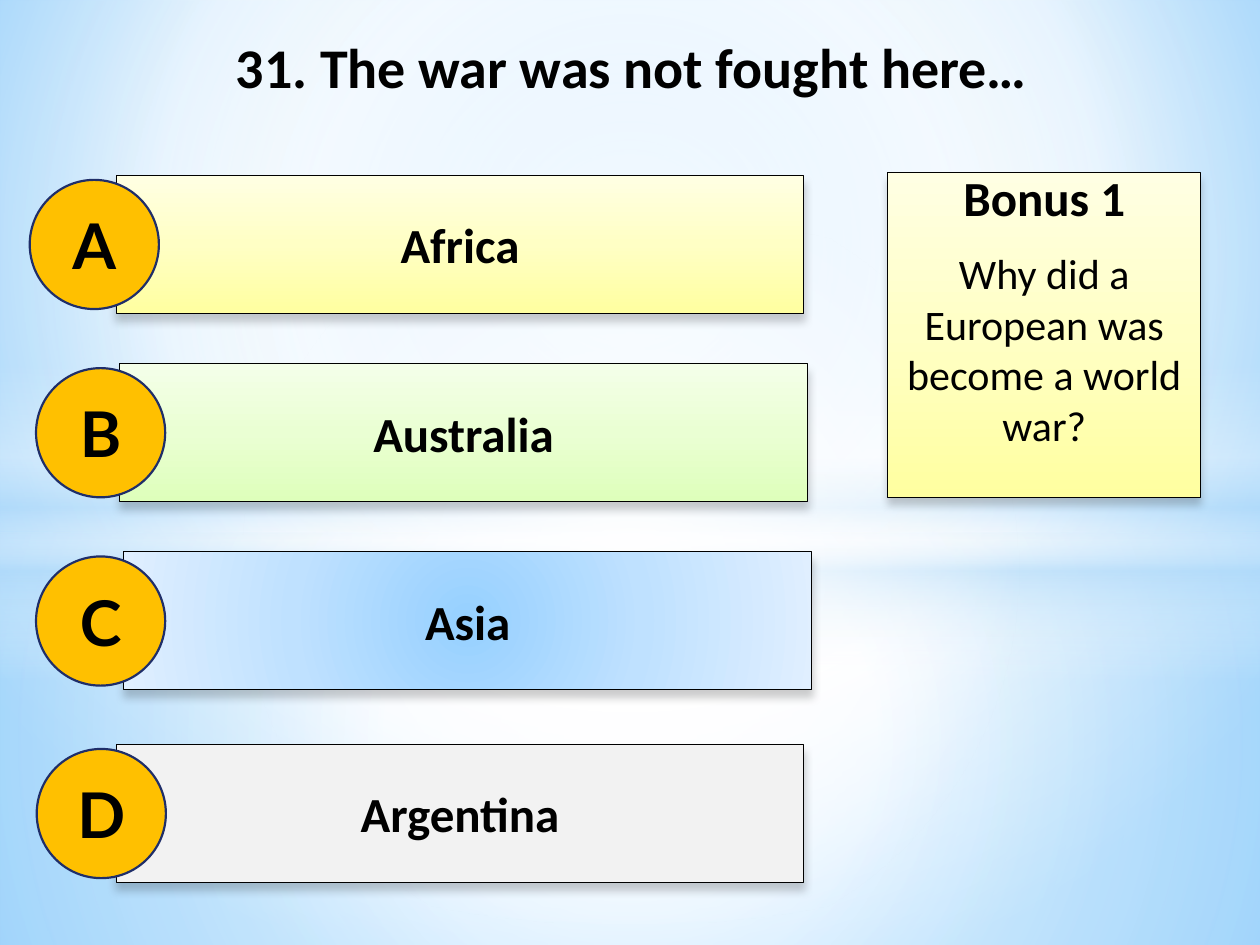
from lxml.etree import SubElement
from pptx import Presentation
from pptx.dml.color import RGBColor
from pptx.enum.shapes import MSO_SHAPE
from pptx.enum.text import MSO_ANCHOR, PP_ALIGN
from pptx.oxml import parse_xml
from pptx.oxml.ns import qn
from pptx.util import Pt

HEX = {
    "black": "000000", "white": "FFFFFF", "mist": "B4DCFA",
    "sky": "9ED5FF", "deep": "5BB9FF", "gold": "FFC000", "navy": "1F2E69",
    "grey": "F2F2F2",
    "lemon": "FFFFA0", "lemon2": "FFFFC5", "lemon3": "FFFFE3",
    "lime": "DEFFBB", "lime2": "EAFFD3", "lime3": "F4FFE9",
    "blue": "96D0FF", "blue2": "BFE1FF", "blue3": "E0EFFF",
}
NS = 'xmlns:a="http://schemas.openxmlformats.org/drawingml/2006/main"'
MID = (50, 50, 50, 50)


def grad(stops, angle=None, to=MID):
    """Gradient fill: stops are (place, colour, opacity) in percent."""
    marks = "".join(
        f'<a:gs pos="{at * 1000}"><a:srgbClr val="{HEX[name]}">'
        f'<a:alpha val="{see * 1000}"/></a:srgbClr></a:gs>'
        for at, name, see in stops)
    if angle is None:
        sides = " ".join(f'{s}="{v * 1000}"' for s, v in zip("ltrb", to))
        way = f'<a:path path="circle"><a:fillToRect {sides}/></a:path>'
    else:
        way = f'<a:lin ang="{angle * 60000}" scaled="0"/>'
    return parse_xml(f'<a:gradFill {NS} rotWithShape="1">'
                     f'<a:gsLst>{marks}</a:gsLst>{way}</a:gradFill>')


def write(frame, text, size=28, font="Calibri", bold=True, before=0, more=False):
    """Put one centred paragraph into a text frame."""
    frame.word_wrap = True
    para = frame.add_paragraph() if more else frame.paragraphs[0]
    para.alignment = PP_ALIGN.CENTER
    para.space_before = Pt(before)
    run = para.add_run()
    run.text = text
    run.font.size, run.font.name, run.font.bold = Pt(size), font, bold
    run.font.color.rgb = RGBColor.from_string(HEX["black"])


deck = Presentation()
deck.slide_width, deck.slide_height = Pt(720), Pt(540)
slide = deck.slides.add_slide(deck.slide_layouts[6])
shapes = slide.shapes

# Background
slide.background.fill.solid()
back = slide.background.fill._xPr
back.replace(back.find(qn("a:solidFill")), grad(
    [(0, "sky", 100), (60, "white", 100), (100, "deep", 100)],
    to=(20, 10, 20, 60)))

# Soft light behind the content
RECT, OVAL = MSO_SHAPE.RECTANGLE, MSO_SHAPE.OVAL
glows = [
    (RECT, 304.5, 235.5, None,
     [(0, "white", 91), (37, "white", 76), (100, "mist", 79)]),
    (RECT, 0, 304.5, None,
     [(0, "white", 89), (48, "white", 62), (100, "mist", 79)]),
    (RECT, 209, 180, 90,
     [(0, "white", 0), (29, "white", 30), (45, "mist", 40),
      (55, "white", 26), (65, "mist", 60), (100, "white", 0)]),
    (OVAL, 126, 402, None, [(0, "white", 100), (54, "white", 0)]),
]
for kind, top, high, angle, stops in glows:
    glow = shapes.add_shape(kind, 0, Pt(top), Pt(720), Pt(high))
    glow.shadow.inherit = False
    glow.line.fill.background()
    glow.fill.background()
    props = glow._element.spPr
    props.replace(props.find(qn("a:noFill")), grad(stops, angle))

# Title
title = shapes.add_textbox(Pt(15), Pt(15), Pt(692), Pt(76))
write(title.text_frame, "31. The war was not fought here…", size=32)

# Answer bars and bonus note
bars = [
    ("Africa", 66.4, 100, 393, 79, "lemon", 270),
    ("Australia", 68.4, 207.6, 393, 79, "lime", 270),
    ("Asia", 70.8, 315.2, 393, 79, "blue", None),
    ("Argentina", 66.4, 425.2, 393, 79, "grey", None),
    ("Bonus 1", 507.2, 98.6, 179, 185.6, "lemon", 270),
]
for text, left, top, wide, high, tint, angle in bars:
    bar = shapes.add_shape(RECT, Pt(left), Pt(top), Pt(wide), Pt(high))
    bar.line.color.rgb = RGBColor.from_string(HEX["black"])
    bar.line.width = Pt(0.5)
    bar.fill.solid()
    bar.fill.fore_color.rgb = RGBColor.from_string(HEX[tint])
    props = bar._element.spPr
    if tint != "grey":
        props.replace(props.find(qn("a:solidFill")), grad(
            [(0, tint, 100), (50, tint + "2", 100), (100, tint + "3", 100)],
            angle))
    bar.shadow.inherit = False
    shade = SubElement(props.find(qn("a:effectLst")), qn("a:outerShdw"),
                       blurRad=str(Pt(5)), dist=str(Pt(4)), dir="5400000",
                       algn="ctr", rotWithShape="0")
    ink = SubElement(shade, qn("a:srgbClr"), val=HEX["black"])
    SubElement(ink, qn("a:alpha"), val="20000")
    frame = bar.text_frame
    frame.vertical_anchor = MSO_ANCHOR.MIDDLE
    write(frame, text)

# Bonus question, in the last box
frame.margin_top, frame.margin_bottom = 0, Pt(30)
write(frame, "Why did a European was become a world war?",
      size=24, bold=False, before=12, more=True)

# Letter discs, each centred on its bar
for letter, left, bar in zip("ABCD", (17, 20.6, 20.6, 21), bars):
    disc = shapes.add_shape(OVAL, Pt(left), Pt(bar[2] + 2.8), Pt(73.8), Pt(73.8))
    disc.shadow.inherit = False
    disc.fill.solid()
    disc.fill.fore_color.rgb = RGBColor.from_string(HEX["gold"])
    disc.line.color.rgb = RGBColor.from_string(HEX["navy"])
    disc.line.width = Pt(1.25)
    disc.text_frame.vertical_anchor = MSO_ANCHOR.MIDDLE
    write(disc.text_frame, letter, size=36, font="Lato")

deck.save("out.pptx")
